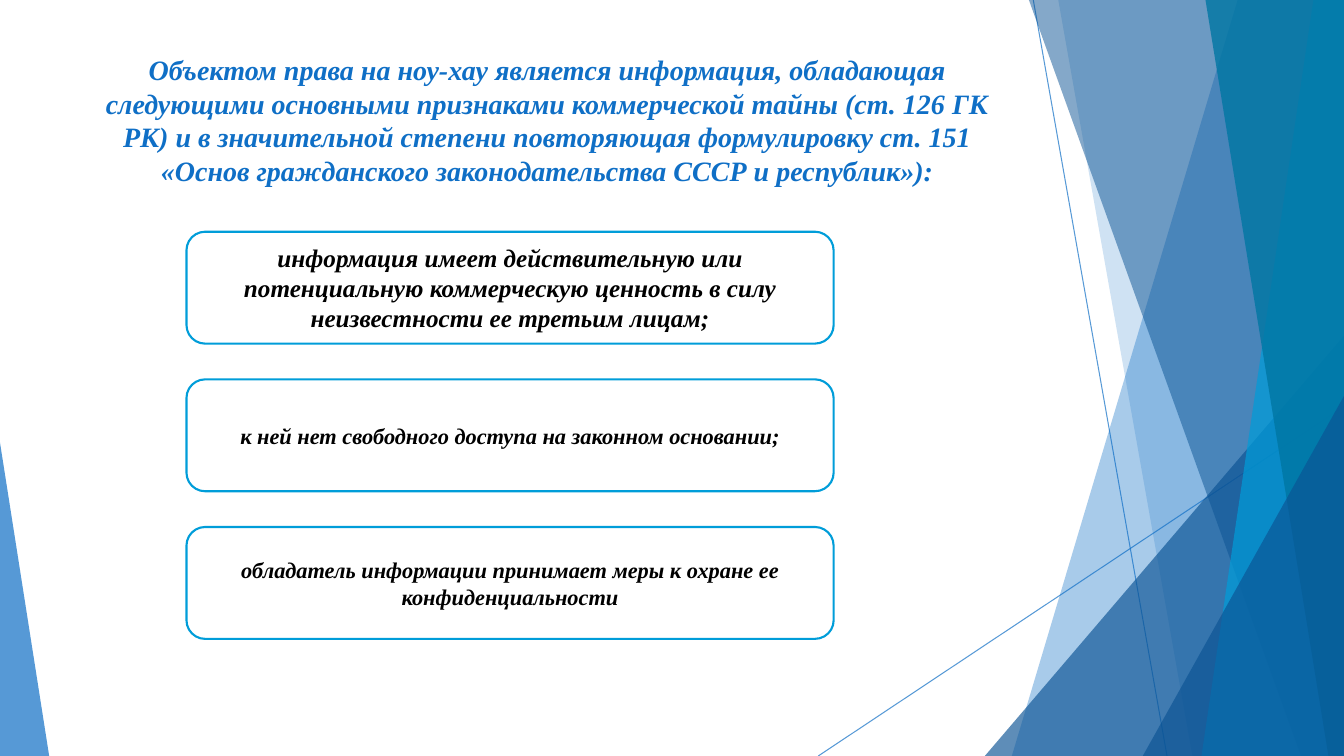
from lxml import etree
from pptx import Presentation
from pptx.dml.color import RGBColor
from pptx.enum.shapes import MSO_CONNECTOR, MSO_SHAPE
from pptx.enum.text import MSO_ANCHOR, PP_ALIGN
from pptx.oxml.ns import qn
from pptx.util import Cm, Pt

CENTER = PP_ALIGN.CENTER
MIDDLE = MSO_ANCHOR.MIDDLE
STRAIGHT = MSO_CONNECTOR.STRAIGHT
ROUNDED = MSO_SHAPE.ROUNDED_RECTANGLE
TRIANGLE = MSO_SHAPE.ISOSCELES_TRIANGLE

BLUE = RGBColor(0x0F, 0x6F, 0xC6)
NAVY = RGBColor(0x0B, 0x53, 0x94)
CYAN = RGBColor(0x00, 0x9D, 0xD9)
TEAL = RGBColor(0x00, 0x76, 0xA3)
WHITE = RGBColor(0xFF, 0xFF, 0xFF)
BLACK = RGBColor(0x00, 0x00, 0x00)

FONT = "Times New Roman"
SLIDE_W, SLIDE_H = 33.87, 19.05

TITLE = (
    "Объектом права на ноу-хау является информация, обладающая следующими "
    "основными признаками коммерческой тайны (ст. 126 ГК РК) и в значительной "
    "степени повторяющая формулировку ст. 151 «Основ гражданского "
    "законодательства СССР и республик»):"
)
FEATURES = [
    ("информация имеет действительную или потенциальную коммерческую ценность "
     "в силу неизвестности ее третьим лицам;", 18),
    ("к ней нет свободного доступа на законном основании;", 16),
    ("обладатель информации принимает меры к охране ее конфиденциальности", 16),
]


def set_alpha(fill_parent, percent):
    """Make the solid colour inside the given XML element translucent."""
    color = fill_parent.find(qn("a:solidFill")).find(qn("a:srgbClr"))
    etree.SubElement(color, qn("a:alpha"), val=str(percent * 1000))


def paint(s, color, opacity):
    s.shadow.inherit = False
    s.fill.solid()
    s.fill.fore_color.rgb = color
    s.line.fill.background()
    set_alpha(s._element.spPr, opacity)


def add_ray(slide, x1, y1, x2, y2):
    ray = slide.shapes.add_connector(STRAIGHT, Cm(x1), Cm(y1), Cm(x2), Cm(y2))
    ray.line.color.rgb = BLUE
    ray.line.width = Pt(0.75)
    sp_pr = ray._element.spPr
    set_alpha(sp_pr.find(qn("a:ln")), 70)
    etree.SubElement(sp_pr, qn("a:effectLst"))


def add_facet(slide, top_x, bottom_x, color, opacity):
    """Full-height panel from a slanted left edge to the slide's right edge."""
    builder = slide.shapes.build_freeform(Cm(top_x), 0)
    builder.add_line_segments([
        (Cm(SLIDE_W), 0), (Cm(SLIDE_W), Cm(SLIDE_H)), (Cm(bottom_x), Cm(SLIDE_H)),
    ])
    paint(builder.convert_to_shape(), color, opacity)


def add_corner(slide, left, width, height, apex, color, opacity):
    """Right triangle standing on the slide's bottom edge."""
    s = slide.shapes.add_shape(
        TRIANGLE, Cm(left), Cm(SLIDE_H - height), Cm(width), Cm(height))
    s.adjustments[0] = apex
    paint(s, color, opacity)


def add_backdrop(slide):
    add_ray(slide, 26.04, 0, 29.41, SLIDE_H)
    add_ray(slide, SLIDE_W, 10.24, 20.62, SLIDE_H)
    add_facet(slide, 31.19, 25.5, BLUE, 36)
    add_facet(slide, 26.67, 30.05, BLUE, 20)
    add_corner(slide, 24.82, 9.05, 10.59, 1, NAVY, 66)
    add_facet(slide, 25.93, 32.79, NAVY, 50)
    add_facet(slide, 33.1, 30.28, CYAN, 70)
    add_facet(slide, 30.38, 33.48, TEAL, 80)
    add_corner(slide, 28.8, 5.07, 9.07, 1, NAVY, 66)
    add_corner(slide, 0, 1.24, 7.9, 0, BLUE, 70)


def write(s, text, size, color):
    tf = s.text_frame
    tf.text = text
    tf.word_wrap = True
    tf.vertical_anchor = MIDDLE
    p = tf.paragraphs[0]
    p.alignment = CENTER
    font = p.runs[0].font
    font.name = FONT
    font.size = Pt(size)
    font.bold = font.italic = True
    font.color.rgb = color


def place_title(slide):
    title = slide.shapes.title
    title.left, title.top = Cm(1.85), Cm(1.19)
    title.width, title.height = Cm(23.88), Cm(3.66)
    write(title, TITLE, 20, BLUE)
    # Keep the title in front of the backdrop.
    slide.shapes._spTree.append(title._element)


def add_feature(slide, top, text, size):
    s = slide.shapes.add_shape(ROUNDED, Cm(4.7), Cm(top), Cm(16.31), Cm(2.82))
    s.shadow.inherit = False
    s.fill.solid()
    s.fill.fore_color.rgb = WHITE
    s.line.color.rgb = CYAN
    s.line.width = Pt(1.5)
    write(s, text, size, BLACK)


def main():
    prs = Presentation()
    prs.slide_width, prs.slide_height = Cm(SLIDE_W), Cm(SLIDE_H)
    slide = prs.slides.add_slide(prs.slide_layouts[5])
    add_backdrop(slide)
    place_title(slide)
    for i, (text, size) in enumerate(FEATURES):
        add_feature(slide, 5.84 + i * 3.72, text, size)
    prs.save("out.pptx")


if __name__ == "__main__":
    main()
